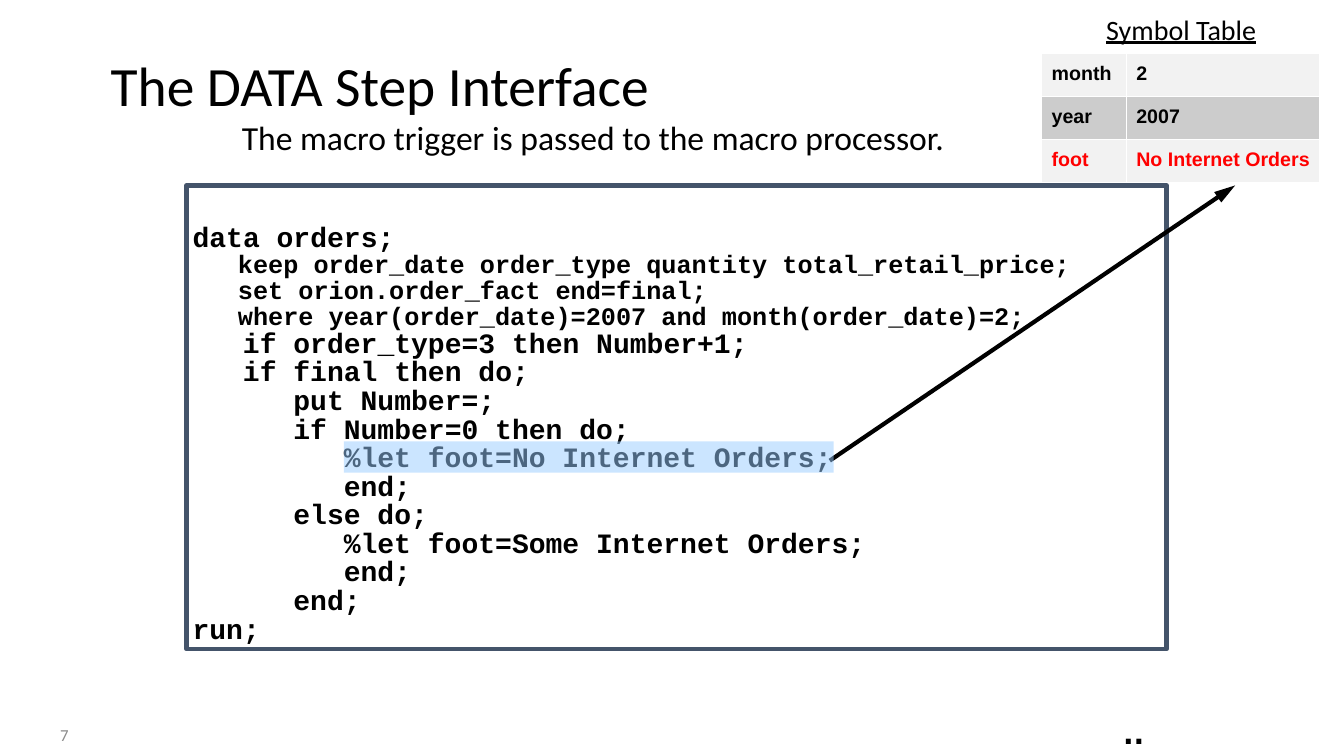
from lxml import etree
from pptx import Presentation
from pptx.dml.color import RGBColor
from pptx.enum import shapes, text
from pptx.oxml import ns, parse_xml
from pptx.util import Inches, Pt

COLORS = {"black": "000000", "white": "FFFFFF", "red": "FF0000", "gray": "8C8C8C",
          "slate": "44546A", "sky": "99CCFF", "light": "F2F2F2", "mid": "CCCCCC"}
rgb = {name: RGBColor.from_string(value) for name, value in COLORS.items()}


def write(p, words, color="black", **font):
    """Add a run to p with the given font attributes."""
    r = p.add_run()
    r.text = words
    r.font.color.rgb = rgb[color]
    for name, value in font.items():
        setattr(r.font, name, value)


def set_margins(obj, left, top, right, bottom):
    for side, size in zip(("left", "top", "right", "bottom"), (left, top, right, bottom)):
        setattr(obj, f"margin_{side}", Inches(size))


prs = Presentation()
prs.slide_width, prs.slide_height = Inches(13.33), Inches(7.5)
s = prs.slides.add_slide(prs.slide_layouts[6])

# Code box: indent in characters, size, statement
code = [
    (0, 20, "data orders;"),
    (3, 18, "keep order_date order_type quantity total_retail_price;"),
    (3, 18, "set orion.order_fact end=final;"),
    (3, 18, "where year(order_date)=2007 and month(order_date)=2;"),
    (3, 20, "if order_type=3 then Number+1;"),
    (3, 20, "if final then do;"),
    (6, 20, "put Number=;"),
    (6, 20, "if Number=0 then do;"),
    (9, 20, "%let foot=No Internet Orders;"),
    (9, 20, "end;"),
    (6, 20, "else do;"),
    (9, 20, "%let foot=Some Internet Orders;"),
    (9, 20, "end;"),
    (6, 20, "end;"),
    (0, 20, "run;"),
]
box = s.shapes.add_shape(shapes.MSO_SHAPE.RECTANGLE, Inches(1.85), Inches(1.84),
                         Inches(9.72), Inches(4.6))
box.shadow.inherit = False
box.fill.solid()
box.fill.fore_color.rgb = rgb["white"]
box.line.color.rgb = rgb["slate"]
box.line.width = Pt(3)
tf = box.text_frame
tf.word_wrap = True
tf.vertical_anchor = text.MSO_ANCHOR.TOP
set_margins(tf, 0.06, 0.39, 0.06, 0)
for i, (indent, size, statement) in enumerate(code):
    p = tf.add_paragraph() if i else tf.paragraphs[0]
    p.alignment = text.PP_ALIGN.LEFT
    p.line_spacing = 0.85
    pPr = p._p.get_or_add_pPr()
    pPr.set("marL", str(Pt(indent * size * 0.6)))
    pPr.set("indent", "0")
    write(p, statement, name="Courier New", size=Pt(size), bold=True)

# Arrow from the macro statement to the symbol table
arrow = s.shapes.add_connector(shapes.MSO_CONNECTOR.STRAIGHT, Inches(8.23), Inches(4.57),
                               Inches(12.25), Inches(1.84))
arrow.line.color.rgb = rgb["black"]
arrow.line.width = Pt(3)
etree.SubElement(arrow.line._get_or_add_ln(), ns.qn("a:tailEnd"), type="triangle", len="lg")
etree.SubElement(arrow._element.spPr, ns.qn("a:effectLst"))

highlight = s.shapes.add_shape(shapes.MSO_SHAPE.RECTANGLE, Inches(3.41), Inches(4.38),
                               Inches(4.86), Inches(0.31))
highlight.shadow.inherit = False
highlight.fill.solid()
highlight.fill.fore_color.rgb = rgb["sky"]
highlight.line.fill.background()
sky = highlight._element.spPr.find(".//" + ns.qn("a:srgbClr"))
etree.SubElement(sky, ns.qn("a:alpha"), val="50000")

# Labels: words, place, wrap, alignment, anchor, line spacing, color, font
left, center, right = text.PP_ALIGN.LEFT, text.PP_ALIGN.CENTER, text.PP_ALIGN.RIGHT
top, middle = text.MSO_ANCHOR.TOP, text.MSO_ANCHOR.MIDDLE
labels = [
    ("The DATA Step Interface", (1, 0.5, 12.33, 0.75), True, left, middle, 0.9, "black",
     {"name": "Calibri", "size": Pt(39.6)}),
    ("7", (0, 7.08, 0.78, 0.42), True, right, middle, 1.0, "gray",
     {"name": "Calibri", "size": Pt(12)}),
    ("The macro trigger is passed to the macro processor.", (2.3, 1.11, 7.23, 0.5), False,
     left, top, 1.0, "black", {"name": "Calibri", "size": Pt(24)}),
    ("Symbol Table", (10.32, 0.07, 2.79, 0.43), True, center, top, 1.0, "black",
     {"name": "Calibri", "size": Pt(20), "underline": True}),
    ("...", (11.04, 7.06, 0.5, 0.43), False, left, top, 1.0, "black",
     {"name": "DejaVu Sans", "size": Pt(20), "bold": True}),
]
for words, place, wrap, align, anchor, spacing, color, font in labels:
    tf = s.shapes.add_textbox(*map(Inches, place)).text_frame
    tf.word_wrap = wrap
    tf.vertical_anchor = anchor
    p = tf.paragraphs[0]
    p.alignment = align
    p.line_spacing = spacing
    write(p, words, color, **font)

# Symbol table
symbols = [("month", "2", "light", "black"), ("year", "2007", "mid", "black"),
           ("foot", "No Internet Orders", "light", "red")]
table = s.shapes.add_table(3, 2, Inches(10.33), Inches(0.53), Inches(2.76), Inches(1.28)).table
for column, width in zip(table.columns, (0.84, 1.92)):
    column.width = Inches(width)
for i, (*words, fill, color) in enumerate(symbols):
    for j, word in enumerate(words):
        cell = table.cell(i, j)
        set_margins(cell, 0.1, 0.09, 0.08, 0.08)
        write(cell.text_frame.paragraphs[0], word, color, name="Arial", size=Pt(14), bold=True)
        tcPr = cell._tc.get_or_add_tcPr()
        for side in ("lnL", "lnR", "lnT", "lnB"):
            tcPr.append(parse_xml(
                f'<a:{side} {ns.nsdecls("a")} w="12700"><a:solidFill>'
                f'<a:srgbClr val="{COLORS["white"]}"/></a:solidFill></a:{side}>'))
        cell.fill.solid()
        cell.fill.fore_color.rgb = rgb[fill]

prs.save("out.pptx")
